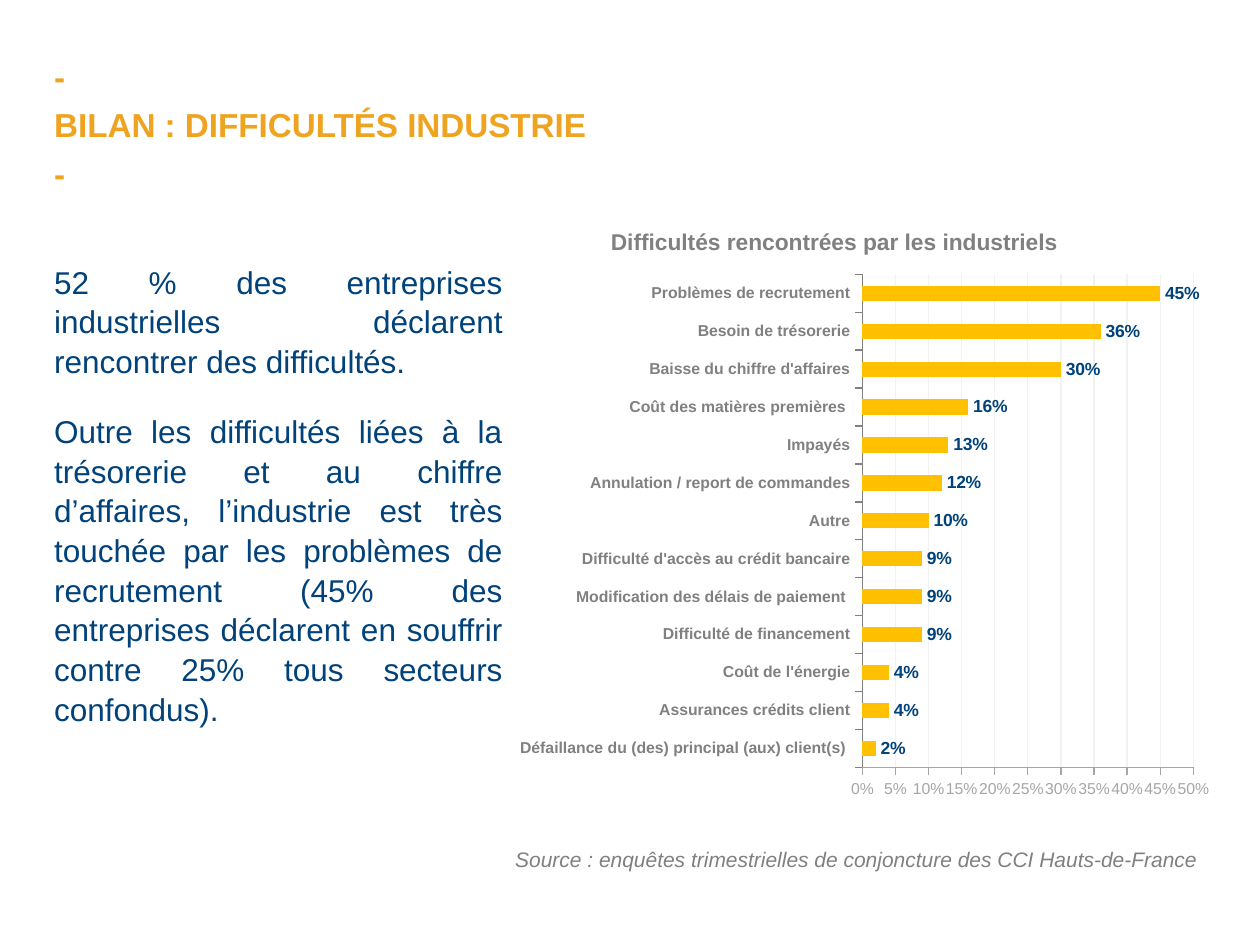
from dataclasses import dataclass

from lxml import etree
from pptx import Presentation
from pptx import util as u
from pptx.chart.data import CategoryChartData
from pptx.dml.color import RGBColor
from pptx.enum import chart as ch
from pptx.enum import text as tx
from pptx.oxml.ns import qn


@dataclass(frozen=True)
class Theme:
    font: str = "Arial"
    gold: str = "EEA420"
    navy: str = "004279"
    gray: str = "808080"
    pale: str = "A6A6A6"
    grid: str = "F2F2F2"
    bar: str = "FFC000"
    title: float = 19
    body: float = 18
    head: float = 13
    note: float = 12
    label: float = 10
    axis: float = 9


HURDLES = [
    ("Problèmes de recrutement", 0.45),
    ("Besoin de trésorerie", 0.36),
    ("Baisse du chiffre d'affaires", 0.30),
    ("Coût des matières premières ", 0.16),
    ("Impayés", 0.13),
    ("Annulation / report de commandes", 0.12),
    ("Autre", 0.10),
    ("Difficulté d'accès au crédit bancaire", 0.09),
    ("Modification des délais de paiement ", 0.09),
    ("Difficulté de financement", 0.09),
    ("Coût de l'énergie", 0.04),
    ("Assurances crédits client", 0.04),
    ("Défaillance du (des) principal (aux) client(s) ", 0.02),
]


class Deck:
    def __init__(self, theme):
        self.theme = theme
        self.prs = Presentation()
        self.prs.slide_width = u.Inches(10)
        self.prs.slide_height = u.Inches(7.5)
        self.slide = self.prs.slides.add_slide(self.prs.slide_layouts[6])

    def style(self, font, size, color, bold=False, italic=False):
        font.name = self.theme.font
        font.size = u.Pt(size)
        font.color.rgb = RGBColor.from_string(color)
        font.bold = bold
        font.italic = italic

    def stroke(self, line, color):
        line.color.rgb = RGBColor.from_string(color)
        line.width = u.Pt(0.75)

    def label(self, box, lines, size, color, bold=False, italic=False):
        frame = self.slide.shapes.add_textbox(*map(u.Inches, box)).text_frame
        frame.word_wrap = True
        for i, line in enumerate(lines):
            para = frame.paragraphs[0] if i == 0 else frame.add_paragraph()
            para.text = line
            self.style(para.font, size, color, bold, italic)
        return frame

    def block(self, box, lines, size, color, bold=False, after=0, align=None):
        """Text without insets, with spacing in step with its size."""
        frame = self.label(box, lines, size, color, bold)
        frame.margin_left = frame.margin_right = 0
        frame.margin_top = frame.margin_bottom = 0
        for para in frame.paragraphs:
            para.space_before = u.Pt(round(0.2 * size, 1))
            para.space_after = u.Pt(after)
            para.line_spacing = 1.05
            para.alignment = align

    def bars(self, box, rows, plot):
        """Bar chart, first row on top; plot is x, y, w, h as shares."""
        t = self.theme
        data = CategoryChartData(number_format="0%")
        names, vals = zip(*reversed(rows))
        data.categories = names
        data.add_series("Difficultés", vals)
        chart = self.slide.shapes.add_chart(
            ch.XL_CHART_TYPE.BAR_CLUSTERED, *map(u.Inches, box), data).chart
        chart.has_title = chart.has_legend = False
        self.style(chart.font, t.axis, t.gray)

        body = chart.plots[0]
        body.gap_width = 150
        body.vary_by_categories = False
        fill = body.series[0].format.fill
        fill.solid()
        fill.fore_color.rgb = RGBColor.from_string(t.bar)
        body.has_data_labels = True
        tags = body.data_labels
        tags.show_value = True
        tags.number_format = "0%"
        tags.number_format_is_linked = False
        tags.position = ch.XL_LABEL_POSITION.OUTSIDE_END
        self.style(tags.font, t.label, t.navy, bold=True)

        cat, val = chart.category_axis, chart.value_axis
        for axis, color in ((cat, t.gray), (val, t.pale)):
            axis.major_tick_mark = ch.XL_TICK_MARK.OUTSIDE
            axis.minor_tick_mark = ch.XL_TICK_MARK.NONE
            self.style(axis.tick_labels.font, t.axis, color, axis is cat)
            self.stroke(axis.format.line, color)
        cat.has_major_gridlines = False
        val.minimum_scale, val.maximum_scale = 0, 0.5
        val.major_unit = 0.05
        val.tick_labels.number_format = "0%"
        val.tick_labels.number_format_is_linked = False
        val.has_major_gridlines = True
        self.stroke(val.major_gridlines.format.line, t.grid)
        self.place(chart, plot)

    def place(self, chart, plot):
        """Fix the inner plot area within the chart."""
        area = chart.plots[0]._element.getparent()
        for old in area.findall(qn("c:layout")):
            area.remove(old)
        layout = etree.Element(qn("c:layout"))
        area.insert(0, layout)
        man = etree.SubElement(layout, qn("c:manualLayout"))
        parts = [("layoutTarget", "inner"), ("xMode", "edge"),
                 ("yMode", "edge"), *zip("xywh", plot)]
        for tag, val in parts:
            etree.SubElement(man, qn(f"c:{tag}")).set("val", str(val))


def main():
    t = Theme()
    deck = Deck(t)
    deck.block((0.43, 0.43, 9.69, 1.04),
               ["-", "BILAN : DIFFICULTÉS INDUSTRIE", "-"],
               t.title, t.gold, bold=True)
    deck.block((0.43, 2.07, 3.56, 4.6), [
        "52 % des entreprises industrielles déclarent rencontrer des "
        "difficultés. ",
        "Outre les difficultés liées à la trésorerie et au chiffre "
        "d’affaires, l’industrie est très touchée par les problèmes de "
        "recrutement (45% des entreprises déclarent en souffrir contre 25% "
        "tous secteurs confondus).",
    ], t.body, t.navy, after=13.7, align=tx.PP_ALIGN.JUSTIFY)
    deck.label((3.99, 6.67, 5.72, 0.3),
               ["Source : enquêtes trimestrielles de conjoncture des CCI "
                "Hauts-de-France"], t.note, t.gray, italic=True)
    deck.label((4.75, 1.76, 4.84, 0.32),
               ["Difficultés rencontrées par les industriels"],
               t.head, t.gray, bold=True)
    deck.bars((3.99, 2.09, 5.71, 4.35), HURDLES, (0.5, 0.02, 0.46, 0.9))
    deck.prs.save("out.pptx")


if __name__ == "__main__":
    main()
